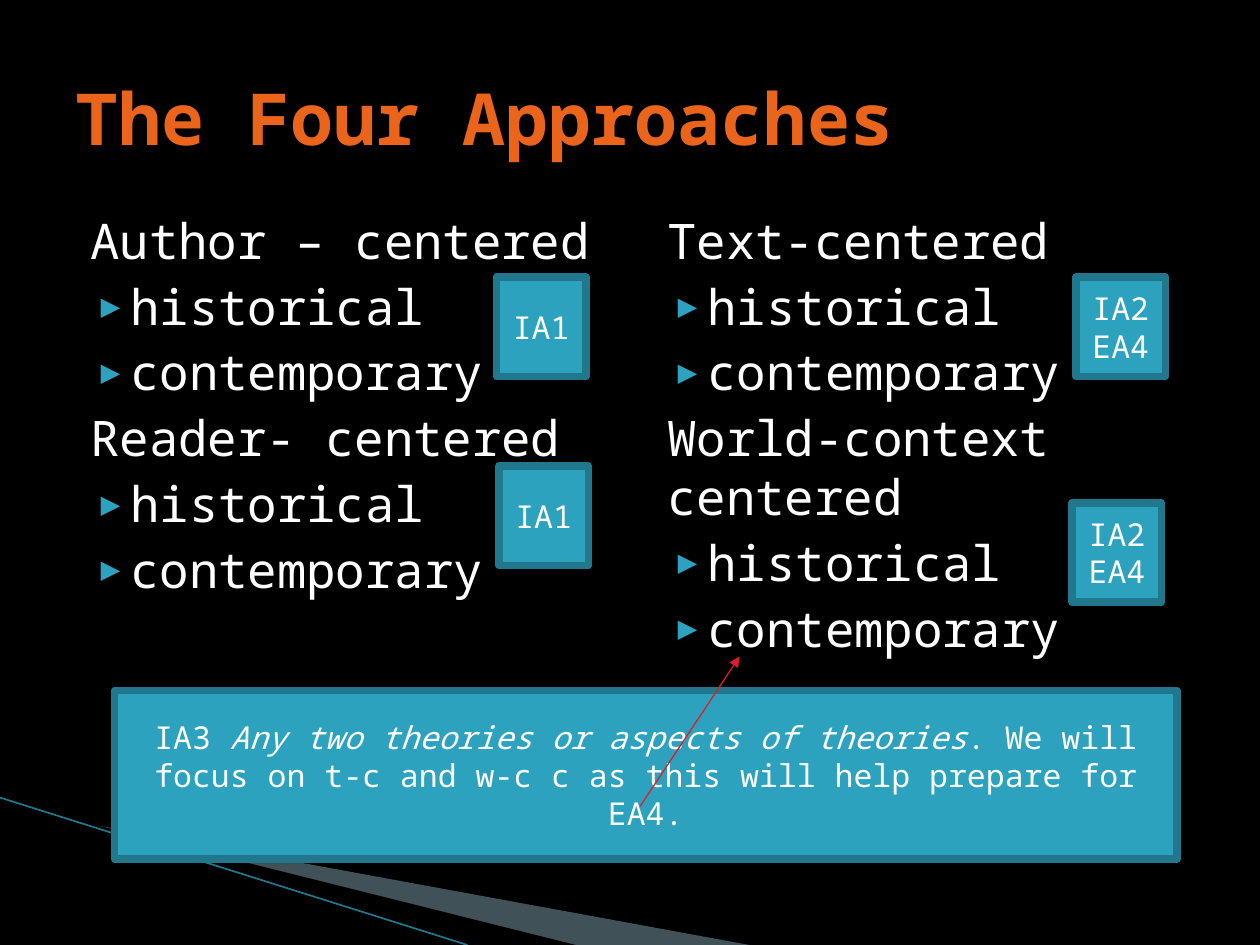
"""Build the slide on the four approaches and their assessments."""
from lxml import etree
from pptx import Presentation
from pptx.dml.color import RGBColor
from pptx.enum.shapes import MSO_CONNECTOR, MSO_SHAPE
from pptx.enum.text import MSO_ANCHOR, PP_ALIGN
from pptx.oxml.ns import qn
from pptx.util import Inches, Pt

COLORS = {name: RGBColor.from_string(code) for name, code in {
    "black": "000000", "white": "FFFFFF", "orange": "EB641B", "teal": "2DA2BF",
    "edge": "21788D", "mist": "A0CBDC", "red": "DA1F28"}.items()}
FONT = "Noto Sans Mono"

deck = Presentation()
deck.slide_width, deck.slide_height = Inches(10), Inches(7.5)
COL, ROW = deck.slide_width / 100, deck.slide_height / 100
slide = deck.slides.add_slide(deck.slide_layouts[6])
slide.background.fill.solid()
slide.background.fill.fore_color.rgb = COLORS["black"]


def place(*shares):
    return [round(share * unit) for share, unit in zip(shares, (COL, ROW) * 2)]


def set_font(paragraph, size, color="white"):
    paragraph.font.name, paragraph.font.size = FONT, Pt(size)
    paragraph.font.color.rgb = COLORS[color]


for color, alpha, outline in [
    ("mist", 40, [(5.5, 86.8), (59.5, 100), (45.6, 100), (5.5, 86.67)]),
    ("black", 100, [(5.3, 86.53), (45.7, 100), (37.2, 100), (5.4, 86.67)]),
]:
    start, *rest = [place(*point) for point in outline]
    builder = slide.shapes.build_freeform(*start)
    builder.add_line_segments(rest)
    wedge = builder.convert_to_shape()
    wedge.shadow.inherit = False
    wedge.line.fill.background()
    wedge.fill.solid()
    wedge.fill.fore_color.rgb = COLORS[color]
    tint = wedge.fill._xPr.find(qn("a:solidFill"))[0]
    etree.SubElement(tint, qn("a:alpha"), val=str(alpha * 1000))

for left, approaches in [
    (5, ["Author – centered", "Reader- centered"]),
    (50.8, ["Text-centered", "World-context centered"]),
]:
    column = slide.shapes.add_textbox(*place(left, 21.6, 44.2, 66)).text_frame
    column.word_wrap = True
    entries = [(text, text == approach) for approach in approaches
               for text in (approach, "historical", "contemporary")]
    for index, (text, is_heading) in enumerate(entries):
        paragraph = column.add_paragraph() if index else column.paragraphs[0]
        paragraph.text = text
        paragraph.space_before = Pt(4 if index else 0)
        properties = paragraph._p.get_or_add_pPr()
        properties.set("marL", str(Inches(0.12 if is_heading else 0.4)))
        properties.set("indent", str(Inches(0 if is_heading else -0.28)))
        if not is_heading:
            bullet_color = etree.SubElement(properties, qn("a:buClr"))
            etree.SubElement(bullet_color, qn("a:srgbClr"), val=str(COLORS["teal"]))
            etree.SubElement(properties, qn("a:buSzPct"), val="68000")
            etree.SubElement(properties, qn("a:buFont"), typeface=FONT)
            etree.SubElement(properties, qn("a:buChar"), char="▶")
        set_font(paragraph, 28)

title = slide.shapes.add_textbox(*place(5, 4, 90, 16.67)).text_frame
title.word_wrap = True
title.vertical_anchor = MSO_ANCHOR.MIDDLE
title.paragraphs[0].text = "The Four Approaches"
set_font(title.paragraphs[0], 41, "orange")
title.paragraphs[0].font.bold = True

BADGE = (7.1, 10.53)
summary = [("IA3 ", False), ("Any two theories or aspects of theories", True),
           (". We will focus on t-c and w-c c as this will help prepare for EA4.", False)]
for area, lines in [
    ((39.4, 29.33, *BADGE), [[("IA1", False)]]),
    ((39.6, 49.33, *BADGE), [[("IA1", False)]]),
    ((85.4, 29.33, *BADGE), [[("IA2", False)], [("EA4", False)]]),
    ((85.1, 53.2, *BADGE), [[("IA2", False)], [("EA4", False)]]),
    ((9.1, 73.07, 84.3, 17.87), [summary]),
]:
    box = slide.shapes.add_shape(MSO_SHAPE.RECTANGLE, *place(*area))
    box.shadow.inherit = False
    box.fill.solid()
    box.fill.fore_color.rgb = COLORS["teal"]
    box.line.color.rgb = COLORS["edge"]
    box.line.width = Pt(4.33)
    label = box.text_frame
    label.word_wrap = True
    label.vertical_anchor = MSO_ANCHOR.MIDDLE
    for index, runs in enumerate(lines):
        paragraph = label.add_paragraph() if index else label.paragraphs[0]
        paragraph.alignment = PP_ALIGN.CENTER
        set_font(paragraph, 18)
        for text, is_italic in runs:
            run = paragraph.add_run()
            run.text = text
            if is_italic:
                run.font.italic = True

for ends, color, width, has_arrow in [
    ((0, 84.4, 37.1, 100), "edge", 0.95, False),
    ((50.8, 85.33, 58.7, 69.47), "red", 0.75, True),
]:
    line = slide.shapes.add_connector(MSO_CONNECTOR.STRAIGHT, *place(*ends))
    line.line.color.rgb = COLORS[color]
    line.line.width = Pt(width)
    if has_arrow:
        etree.SubElement(line.line._get_or_add_ln(), qn("a:tailEnd"), type="triangle")
    else:
        slide.shapes._spTree.insert(4, line._element)
    etree.SubElement(line._element.spPr, qn("a:effectLst"))

deck.save("out.pptx")
